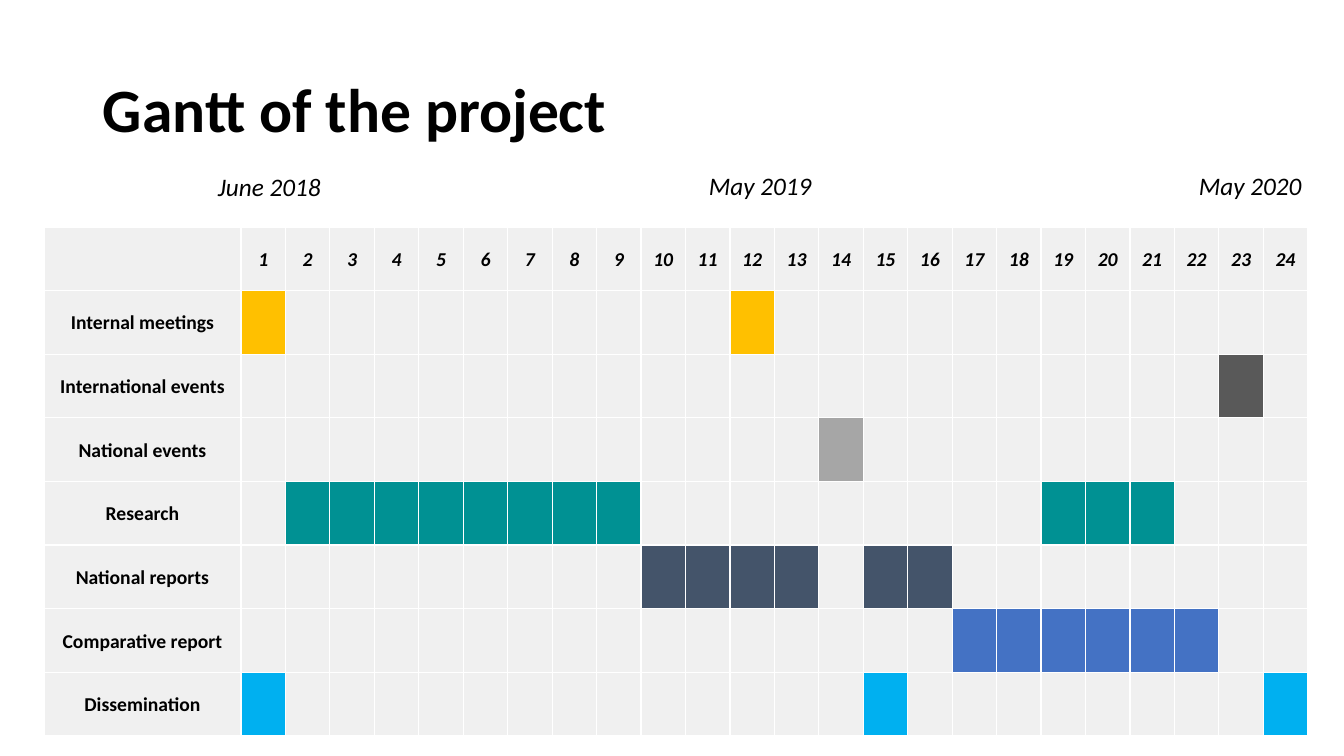
from lxml import etree
from pptx import Presentation
from pptx import util as u
from pptx.dml.color import RGBColor
from pptx.enum import text
from pptx.oxml import ns

# Content
TITLE = "Gantt of the project"
MONTHS = 24
TASKS = [  # label, colour, active months
    ("Internal meetings", "amber", [1, 12]),
    ("International events", "charcoal", [23]),
    ("National events", "grey", [14]),
    ("Research", "teal", [*range(2, 10), *range(19, 22)]),
    ("National reports", "slate", [*range(10, 14), 15, 16]),
    ("Comparative report", "blue", range(17, 23)),
    ("Dissemination", "sky", [1, 15, 24]),
]
DATES = [  # text, left, top, width
    ("June 2018", 208, 166, 126),
    ("May 2019", 699, 165, 124),
    ("May 2020", 1189, 165, 124),
]
COLORS = {
    "text": "000000", "border": "FFFFFF", "empty": "F0F0F0",
    "amber": "FFC000", "charcoal": "595959", "grey": "A6A6A6",
    "teal": "009193", "slate": "44546A", "blue": "4472C4", "sky": "00B0F0",
}
FONT = "Calibri"

# Geometry in px
SLIDE_WIDTH, SLIDE_HEIGHT = 1344, 756
TITLE_BOX = (93, 40, 1159, 146)
TABLE_BOX = (44, 227, 1264, 509)
LABEL_WIDTH = 197
DATE_HEIGHT = 40
CELL_MARGIN = 4
EMU_PER_PX = u.Inches(1) / 100.8


def px(length):
    return u.Emu(round(length * EMU_PER_PX))


def add_run(paragraph, words, size, bold=False, italic=False):
    run = paragraph.add_run()
    run.text = words
    run.font.name = FONT
    run.font.size = u.Pt(size)
    run.font.bold = bold
    run.font.italic = italic
    run.font.color.rgb = RGBColor.from_string(COLORS["text"])


def add_text_box(slide, box, words, size, wrap, **style):
    shape = slide.shapes.add_textbox(*map(px, box))
    shape.text_frame.word_wrap = wrap
    add_run(shape.text_frame.paragraphs[0], words, size, **style)
    return shape


def style_cell(cell, color):
    properties = cell._tc.get_or_add_tcPr()
    for side in ("a:lnL", "a:lnR", "a:lnT", "a:lnB"):
        line = etree.SubElement(properties, ns.qn(side), w=str(u.Pt(1)))
        fill = etree.SubElement(line, ns.qn("a:solidFill"))
        etree.SubElement(fill, ns.qn("a:srgbClr"), val=COLORS["border"])
    cell.fill.solid()
    cell.fill.fore_color.rgb = RGBColor.from_string(COLORS[color])
    cell.vertical_anchor = text.MSO_ANCHOR.MIDDLE
    cell.margin_left = cell.margin_right = px(CELL_MARGIN)
    cell.margin_top = cell.margin_bottom = px(CELL_MARGIN)


def write_cell(cell, words, italic=False):
    paragraph = cell.text_frame.paragraphs[0]
    paragraph.alignment = text.PP_ALIGN.CENTER
    paragraph.line_spacing = 1.07
    paragraph.space_after = u.Pt(8)
    add_run(paragraph, words, 14, bold=True, italic=italic)


def add_gantt(slide):
    row_count = len(TASKS) + 1
    frame = slide.shapes.add_table(row_count, MONTHS + 1, *map(px, TABLE_BOX))
    table = frame.table
    table.first_row = table.horz_banding = False

    # Equal months after the label column, equal rows
    month_width = (TABLE_BOX[2] - LABEL_WIDTH) / MONTHS
    for index, column in enumerate(table.columns):
        column.width = px(month_width if index else LABEL_WIDTH)
    for row in table.rows:
        row.height = px(TABLE_BOX[3] / row_count)

    # Month numbers
    style_cell(table.cell(0, 0), "empty")
    for month in range(1, MONTHS + 1):
        cell = table.cell(0, month)
        style_cell(cell, "empty")
        write_cell(cell, str(month), italic=True)

    # Task rows
    for row, (label, color, active) in enumerate(TASKS, start=1):
        for month in range(MONTHS + 1):
            style_cell(table.cell(row, month), color if month in active else "empty")
        write_cell(table.cell(row, 0), label)


def main():
    presentation = Presentation()
    presentation.slide_width = px(SLIDE_WIDTH)
    presentation.slide_height = px(SLIDE_HEIGHT)
    slide = presentation.slides.add_slide(presentation.slide_layouts[6])

    # Title
    title = add_text_box(slide, TITLE_BOX, TITLE, 44, True, bold=True)
    title.text_frame.vertical_anchor = text.MSO_ANCHOR.MIDDLE
    title.text_frame.paragraphs[0].line_spacing = 0.9

    # Chart and its dates
    add_gantt(slide)
    for words, left, top, width in DATES:
        box = (left, top, width, DATE_HEIGHT)
        date = add_text_box(slide, box, words, 18, False, italic=True)
        date.text_frame.auto_size = text.MSO_AUTO_SIZE.SHAPE_TO_FIT_TEXT

    presentation.save("out.pptx")


if __name__ == "__main__":
    main()
